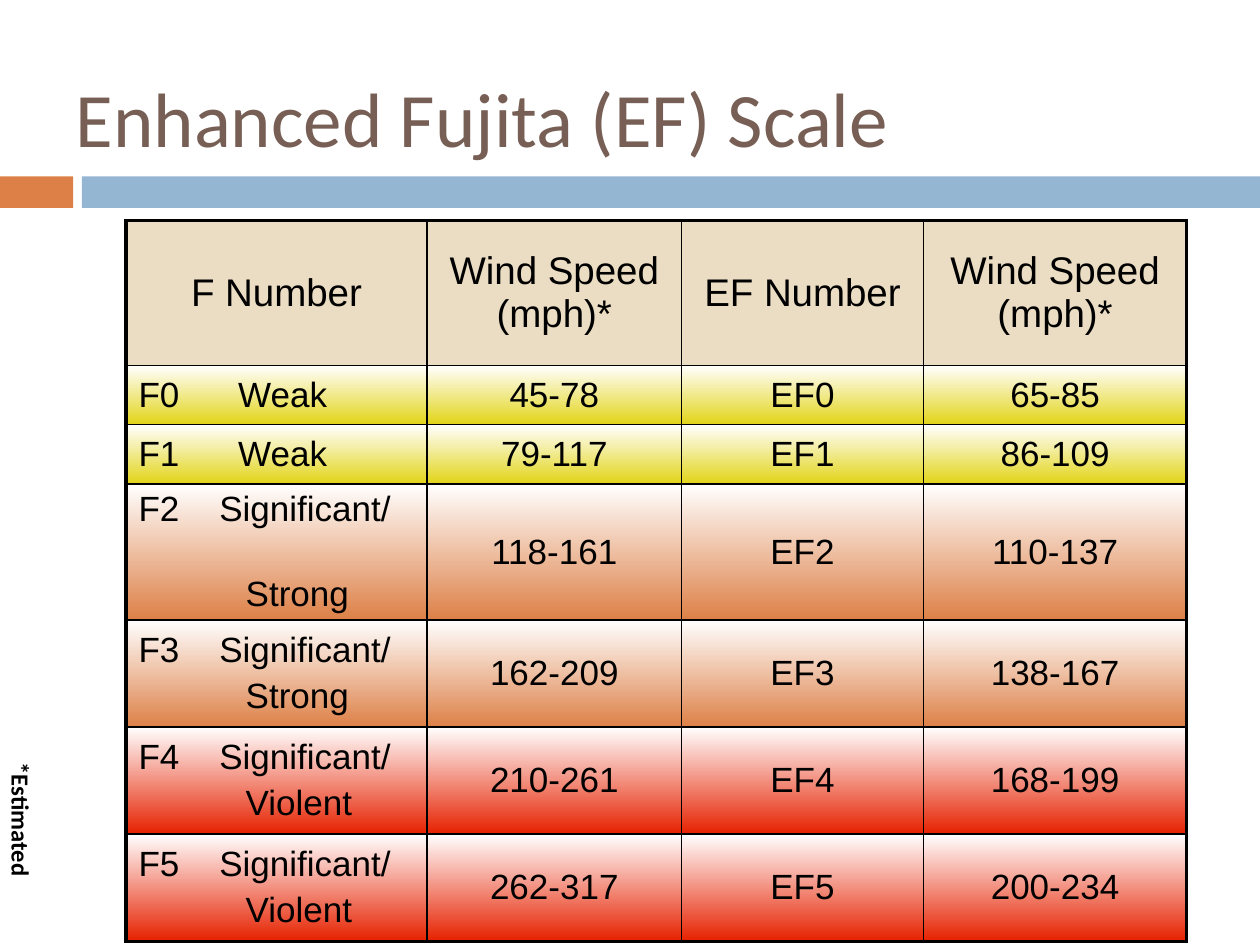
from lxml.etree import SubElement as Sub
from pptx import Presentation
from pptx.dml.color import RGBColor
from pptx.enum.shapes import MSO_SHAPE as Shape
from pptx.enum.text import MSO_ANCHOR as Anchor, PP_ALIGN as Align
from pptx.oxml import parse_xml
from pptx.oxml.ns import nsdecls, qn
from pptx.util import Inches, Pt

BLACK = RGBColor(0x00, 0x00, 0x00)
WHITE = RGBColor(0xFF, 0xFF, 0xFF)
BROWN = RGBColor(0x77, 0x5F, 0x55)
ORANGE = RGBColor(0xDD, 0x80, 0x47)
BLUE = RGBColor(0x94, 0xB6, 0xD2)
SAND = RGBColor(0xEB, 0xDD, 0xC3)
YELLOW = RGBColor(0xE2, 0xD4, 0x18)
RED = RGBColor(0xE6, 0x21, 0x00)

TITLE = "Enhanced Fujita (EF) Scale"
NOTE = "*Estimated"
HEAD = ["F Number", "Wind Speed (mph)*", "EF Number", "Wind Speed (mph)*"]
# level, strength lines, F speed, EF speed, colour
SCALE = [
    (0, ["Weak"], "45-78", "65-85", YELLOW),
    (1, ["Weak"], "79-117", "86-109", YELLOW),
    (2, ["Significant/", "Strong"], "118-161", "110-137", ORANGE),
    (3, ["Significant/", "Strong"], "162-209", "138-167", ORANGE),
    (4, ["Significant/", "Violent"], "210-261", "168-199", RED),
    (5, ["Significant/", "Violent"], "262-317", "200-234", RED),
]
BARS = [(0, 0.58, ORANGE), (0.65, 9.35, BLUE)]
COLS = [2.39, 2.02, 1.92, 2.09]
ROWS = [1.15, 0.47, 0.47] + [0.85] * 4
TABS = {1: 0.79, 2: 0.64}  # by number of strength lines
INDENT = 0.85
GAPS = {2: 26}  # the F2 row is set wider
GAP = 4

TITLE_FONT = {"name": "Calibri", "size": Pt(44), "bold": False}
HEAD_FONT = {"name": "Arial", "size": Pt(22), "bold": False}
CELL_FONT = {"name": "Arial", "size": Pt(20), "bold": False}
NOTE_FONT = {"name": "Calibri", "size": Pt(14), "bold": True}


def write(para, text, font, color=BLACK, align=Align.LEFT):
    para.alignment = align
    run = para.add_run()
    run.text = text
    for key, value in font.items():
        setattr(run.font, key, value)
    run.font.color.rgb = color


def shade(cell, color):
    """Fade from white at the top to the colour at the bottom."""
    cell.fill.gradient()
    cell.fill.gradient_angle = 270
    for stop, tone, pos in zip(cell.fill.gradient_stops, (WHITE, color), (0, 1)):
        stop.color.rgb = tone
        stop.position = pos


def rule(cell, row, col):
    """Draw thick lines on the table's rim and thin ones inside."""
    rim = {"L": col == 0, "R": col == len(COLS) - 1,
           "T": row == 0, "B": row == len(ROWS) - 1}
    props = cell._tc.get_or_add_tcPr()
    for at, (side, edge) in enumerate(rim.items()):
        width = Pt(2.25 if edge else 1)
        props.insert(at, parse_xml(
            f'<a:ln{side} {nsdecls("a")} w="{width}"><a:solidFill>'
            f'<a:srgbClr val="{BLACK}"/></a:solidFill></a:ln{side}>'))


def rate(cell, level, lines):
    """Write the F number, a tab and its strength."""
    frame = cell.text_frame
    first = frame.paragraphs[0]
    tabs = Sub(first._p.get_or_add_pPr(), qn("a:tabLst"))
    Sub(tabs, qn("a:tab"), pos=str(Inches(TABS[len(lines)])), algn="l")
    write(first, f"F{level}\t{lines[0]}", CELL_FONT)
    for line in lines[1:]:
        para = frame.add_paragraph()
        para._p.get_or_add_pPr().set("marL", str(Inches(INDENT)))
        para.space_before = Pt(GAPS.get(level, GAP))
        write(para, line, CELL_FONT)


def add_scale(slide):
    table = slide.shapes.add_table(
        len(ROWS), len(COLS), Inches(1), Inches(1.75),
        Inches(sum(COLS)), Inches(sum(ROWS))).table
    table.first_row = table.horz_banding = False
    for col, width in zip(table.columns, COLS):
        col.width = Inches(width)
    for row, height in zip(table.rows, ROWS):
        row.height = Inches(height)

    for col, text in enumerate(HEAD):
        cell = table.cell(0, col)
        cell.fill.solid()
        cell.fill.fore_color.rgb = SAND
        write(cell.text_frame.paragraphs[0], text, HEAD_FONT, align=Align.CENTER)
    for row, (level, lines, old, new, color) in enumerate(SCALE, 1):
        rate(table.cell(row, 0), level, lines)
        for col, text in enumerate([old, f"EF{level}", new], 1):
            para = table.cell(row, col).text_frame.paragraphs[0]
            write(para, text, CELL_FONT, align=Align.CENTER)
        for col in range(len(COLS)):
            shade(table.cell(row, col), color)
    for row in range(len(ROWS)):
        for col in range(len(COLS)):
            cell = table.cell(row, col)
            cell.vertical_anchor = Anchor.MIDDLE
            rule(cell, row, col)


def main():
    deck = Presentation()
    deck.slide_width, deck.slide_height = Inches(10), Inches(7.5)
    slide = deck.slides.add_slide(deck.slide_layouts[5])

    for left, width, color in BARS:
        bar = slide.shapes.add_shape(
            Shape.RECTANGLE, Inches(left), Inches(1.4), Inches(width), Inches(0.25))
        bar.shadow.inherit = False
        bar.fill.solid()
        bar.fill.fore_color.rgb = color
        bar.line.fill.background()

    title = slide.shapes.title
    title.left, title.top = Inches(0.5), Inches(0.3)
    title.width, title.height = Inches(9), Inches(1.25)
    title.text_frame.vertical_anchor = Anchor.MIDDLE
    write(title.text_frame.paragraphs[0], TITLE, TITLE_FONT, BROWN)

    add_scale(slide)

    note = slide.shapes.add_textbox(
        Inches(-0.6), Inches(6.56), Inches(1.54), Inches(0.33))
    note.rotation = 90
    note.text_frame.word_wrap = True
    write(note.text_frame.paragraphs[0], NOTE, NOTE_FONT)

    deck.save("out.pptx")


if __name__ == "__main__":
    main()
